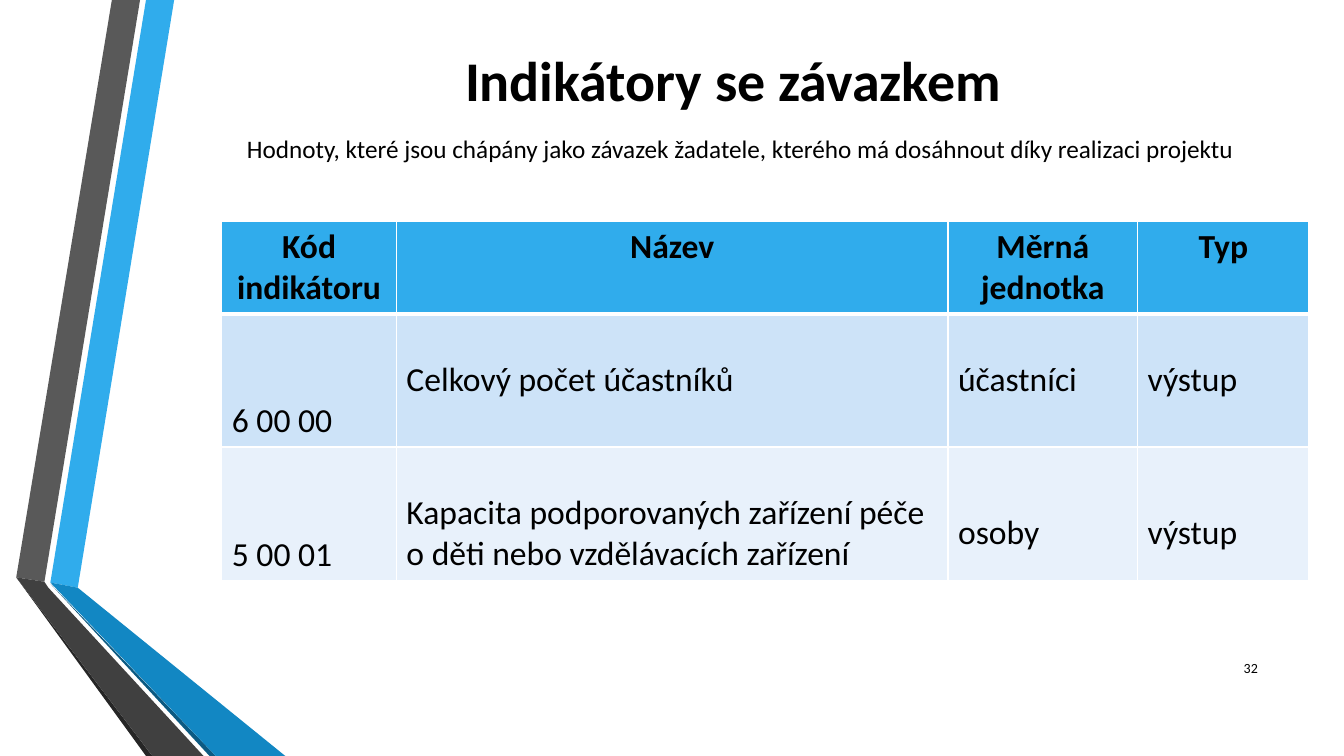
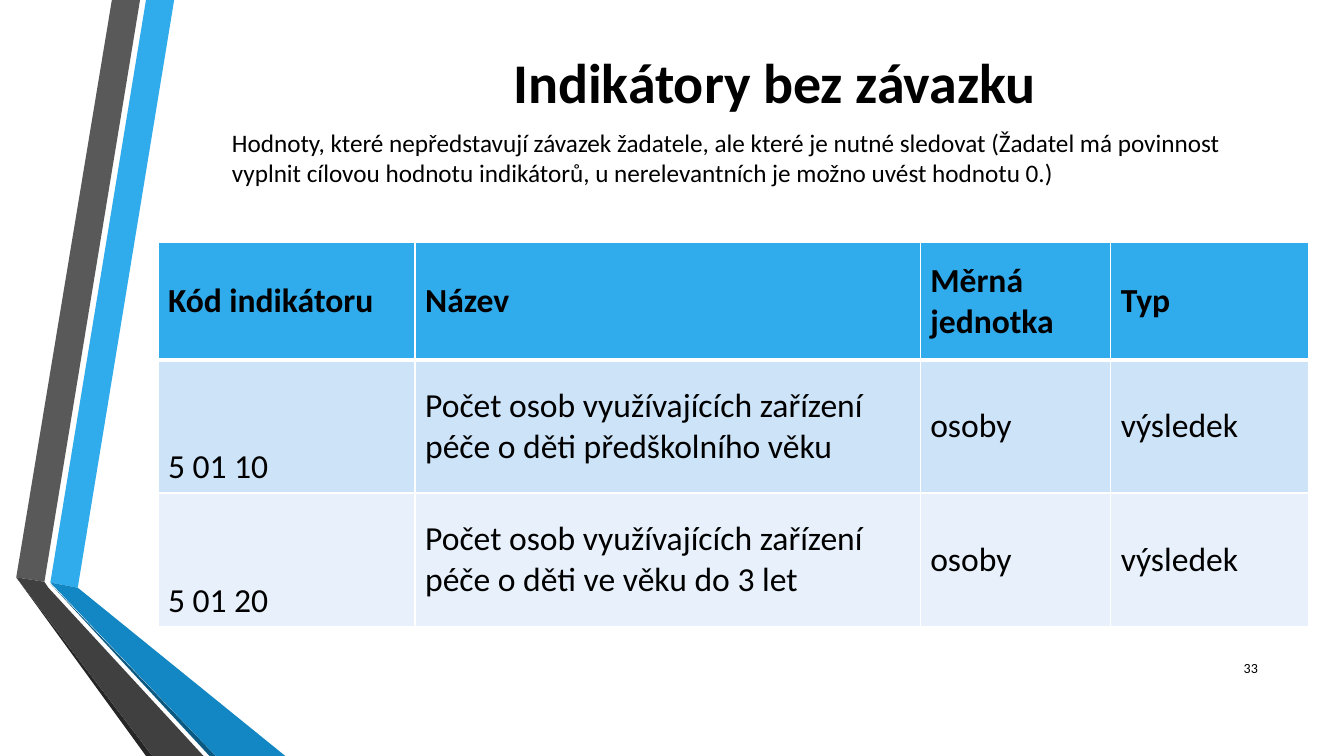
from dataclasses import dataclass

from pptx import Presentation
from pptx.dml.color import RGBColor
from pptx.enum.text import MSO_ANCHOR, MSO_AUTO_SIZE, PP_ALIGN
from pptx.oxml import parse_xml
from pptx.oxml.ns import nsdecls, qn
from pptx.util import Cm, Pt

LEFT, CENTER, RIGHT = PP_ALIGN.LEFT, PP_ALIGN.CENTER, PP_ALIGN.RIGHT
TOP, MIDDLE = MSO_ANCHOR.TOP, MSO_ANCHOR.MIDDLE
NO_AUTOFIT = MSO_AUTO_SIZE.NONE

BLACK, WHITE = "000000", "FFFFFF"
BLUE, DARK_BLUE, DEEP_BLUE = "30ACEC", "1287C3", "0C5A82"
GREY, DARK_GREY, NEAR_BLACK = "595959", "404040", "262626"
BODY_FILLS = ("CDE3F8", "E8F1FB")

TITLE_FORMAT = {"name": "Calibri", "size": Pt(40), "bold": True}
SUBTITLE_FORMAT = {"name": "Calibri", "size": Pt(18), "bold": False}
HEADER_FORMAT = {"name": "Calibri", "size": Pt(24), "bold": True}
CELL_FORMAT = {"name": "Calibri", "size": Pt(24), "bold": False}
NUMBER_FORMAT = {"name": "Calibri", "size": Pt(10), "bold": False}

HEADERS = ("Kód indikátoru", "Název", "Měrná jednotka", "Typ")
CELL_MARGIN = 0.13
CODE_LINE_SPACING = 3.0


@dataclass(frozen=True)
class Box:
    left: float
    top: float
    width: float
    height: float


@dataclass(frozen=True)
class Band:
    color: str
    points: tuple[tuple[float, float], ...]


@dataclass(frozen=True)
class Row:
    texts: tuple[str, str, str, str]
    lowered: float = 0


@dataclass(frozen=True)
class IndicatorSlide:
    number: int
    title: str
    title_box: Box
    subtitle: str
    subtitle_box: Box
    table_left: float
    table_top: float
    column_widths: tuple[float, ...]
    row_heights: tuple[float, ...]
    header_alignment: PP_ALIGN
    header_anchor: MSO_ANCHOR
    rows: tuple[Row, ...]


BANDS = (
    Band(BLUE, ((1.27, 14.68), (1.96, 14.81), (4.39, 0), (3.68, 0))),
    Band(GREY, ((3.53, 0), (2.82, 0), (0.41, 14.55), (1.12, 14.66))),
    Band(NEAR_BLACK, ((0.41, 14.55), (3.68, 19.05), (3.84, 19.05))),
    Band(DEEP_BLUE, ((1.27, 14.71), (5.28, 19.05), (5.44, 19.05))),
    Band(DARK_BLUE, ((1.27, 14.68), (5.44, 19.05), (7.19, 19.05), (1.96, 14.81))),
    Band(DARK_GREY, ((5.13, 19.05), (1.22, 14.81), (1.12, 14.66),
                     (0.41, 14.55), (3.84, 19.05))),
)
NUMBER_BOX = Box(30.43, 16.33, 1.52, 1.02)

SLIDES = (
    IndicatorSlide(
        number=32,
        title="Indikátory se závazkem",
        title_box=Box(8.3, 1.02, 20.35, 1.96),
        subtitle="Hodnoty, které jsou chápány jako závazek žadatele, "
                 "kterého má dosáhnout díky realizaci projektu",
        subtitle_box=Box(5.97, 3.23, 26.37, 1.02),
        table_left=5.59,
        table_top=5.59,
        column_widths=(4.4, 13.9, 4.78, 4.32),
        row_heights=(2.26, 3.31, 3.31),
        header_alignment=CENTER,
        header_anchor=TOP,
        rows=(
            Row(("6 00 00", "Celkový počet účastníků", "účastníci", "výstup")),
            Row(("5 00 01",
                 "Kapacita podporovaných zařízení péče o děti "
                 "nebo vzdělávacích zařízení", "osoby", "výstup"), lowered=1),
        ),
    ),
    IndicatorSlide(
        number=33,
        title="Indikátory bez závazku",
        title_box=Box(8.46, 1.07, 22.12, 1.96),
        subtitle="Hodnoty, které nepředstavují závazek žadatele, ale které je "
                 "nutné sledovat (Žadatel má povinnost vyplnit cílovou hodnotu "
                 "indikátorů, u nerelevantních je možno uvést hodnotu 0.)",
        subtitle_box=Box(5.59, 3.07, 27.28, 1.8),
        table_left=3.98,
        table_top=6.12,
        column_widths=(6.48, 12.73, 4.8, 4.98),
        row_heights=(2.95, 3.31, 3.31),
        header_alignment=LEFT,
        header_anchor=MIDDLE,
        rows=(
            Row(("5 01 10",
                 "Počet osob využívajících zařízení péče o děti předškolního věku",
                 "osoby", "výsledek")),
            Row(("5 01 20",
                 "Počet osob využívajících zařízení péče o děti ve věku do 3 let",
                 "osoby", "výsledek")),
        ),
    ),
)


def color(value: str) -> RGBColor:
    return RGBColor.from_string(value)


def write_text(text_frame, text: str, font_format: dict, alignment: PP_ALIGN):
    paragraph = text_frame.paragraphs[0]
    paragraph.alignment = alignment
    paragraph.space_before = Pt(0)
    run = paragraph.add_run()
    run.text = text
    for name, value in font_format.items():
        setattr(run.font, name, value)
    run.font.color.rgb = color(BLACK)
    return paragraph


def fill_text_shape(shape, box: Box, text: str, font_format: dict,
                    alignment: PP_ALIGN, anchor: MSO_ANCHOR):
    for name in ("left", "top", "width", "height"):
        setattr(shape, name, Cm(getattr(box, name)))
    frame_format = {"word_wrap": True, "auto_size": NO_AUTOFIT,
                    "vertical_anchor": anchor}
    for name, value in frame_format.items():
        setattr(shape.text_frame, name, value)
    return write_text(shape.text_frame, text, font_format, alignment)


def remove_bullet(paragraph) -> None:
    properties = paragraph.alignment is not None and paragraph._p.get_or_add_pPr()
    properties.set("marL", "0")
    properties.set("indent", "0")
    properties.append(parse_xml(f"<a:buNone {nsdecls('a')}/>"))


def draw_band(slide, band: Band) -> None:
    points = [(Cm(x), Cm(y)) for x, y in band.points]
    builder = slide.shapes.build_freeform(*points[0])
    builder.add_line_segments(points[1:], close=True)
    shape = builder.convert_to_shape()
    shape.shadow.inherit = False
    shape.fill.solid()
    shape.fill.fore_color.rgb = color(band.color)
    shape.line.fill.background()


def set_borders(cell_element, row_index: int) -> None:
    widths = {
        "lnL": 1,
        "lnR": 1,
        "lnT": 3 if row_index == 1 else 1,
        "lnB": 3 if row_index == 0 else 1,
    }
    properties = cell_element.get_or_add_tcPr()
    for position, (tag, width) in enumerate(widths.items()):
        properties.insert(position, parse_xml(
            f'<a:{tag} {nsdecls("a")} w="{Pt(width)}"><a:solidFill>'
            f'<a:srgbClr val="{WHITE}"/></a:solidFill></a:{tag}>'))


def fill_cell(cell, text: str, fill: str, font_format: dict,
              alignment: PP_ALIGN, anchor: MSO_ANCHOR):
    cell.fill.solid()
    cell.fill.fore_color.rgb = color(fill)
    cell.vertical_anchor = anchor
    return write_text(cell.text_frame, text, font_format, alignment)


def draw_table(slide, content: IndicatorSlide) -> None:
    widths, heights = content.column_widths, content.row_heights
    frame = slide.shapes.add_table(
        len(heights), len(widths), Cm(content.table_left), Cm(content.table_top),
        Cm(sum(widths)), Cm(sum(heights)))
    table = frame.table
    for column, width in zip(table.columns, widths):
        column.width = Cm(width)
    for row, height in zip(table.rows, heights):
        row.height = Cm(height)
    for column_index, header in enumerate(HEADERS):
        fill_cell(table.cell(0, column_index), header, BLUE, HEADER_FORMAT,
                  content.header_alignment, content.header_anchor)
    for row_index, (row, fill) in enumerate(zip(content.rows, BODY_FILLS), 1):
        for column_index, text in enumerate(row.texts):
            cell = table.cell(row_index, column_index)
            paragraph = fill_cell(cell, text, fill, CELL_FORMAT, LEFT, MIDDLE)
            if column_index == 0:
                paragraph.line_spacing = CODE_LINE_SPACING
            else:
                cell.margin_top = Cm(CELL_MARGIN + row.lowered)
    for row_index, row_element in enumerate(frame.element.iter(qn("a:tr"))):
        for cell_element in row_element.iter(qn("a:tc")):
            set_borders(cell_element, row_index)


def draw_slide(presentation, content: IndicatorSlide) -> None:
    slide = presentation.slides.add_slide(presentation.slide_layouts[1])
    for band in BANDS:
        draw_band(slide, band)
    fill_text_shape(slide.shapes.title, content.title_box, content.title,
                    TITLE_FORMAT, CENTER, MIDDLE)
    remove_bullet(fill_text_shape(
        slide.placeholders[1], content.subtitle_box, content.subtitle,
        SUBTITLE_FORMAT, LEFT, TOP))
    draw_table(slide, content)
    number_shape = slide.shapes.add_textbox(0, 0, 0, 0)
    fill_text_shape(number_shape, NUMBER_BOX, str(content.number),
                    NUMBER_FORMAT, RIGHT, MIDDLE)


def main() -> None:
    presentation = Presentation()
    presentation.slide_width = Cm(33.87)
    presentation.slide_height = Cm(19.05)
    for content in SLIDES:
        draw_slide(presentation, content)
    presentation.save("out.pptx")


if __name__ == "__main__":
    main()
